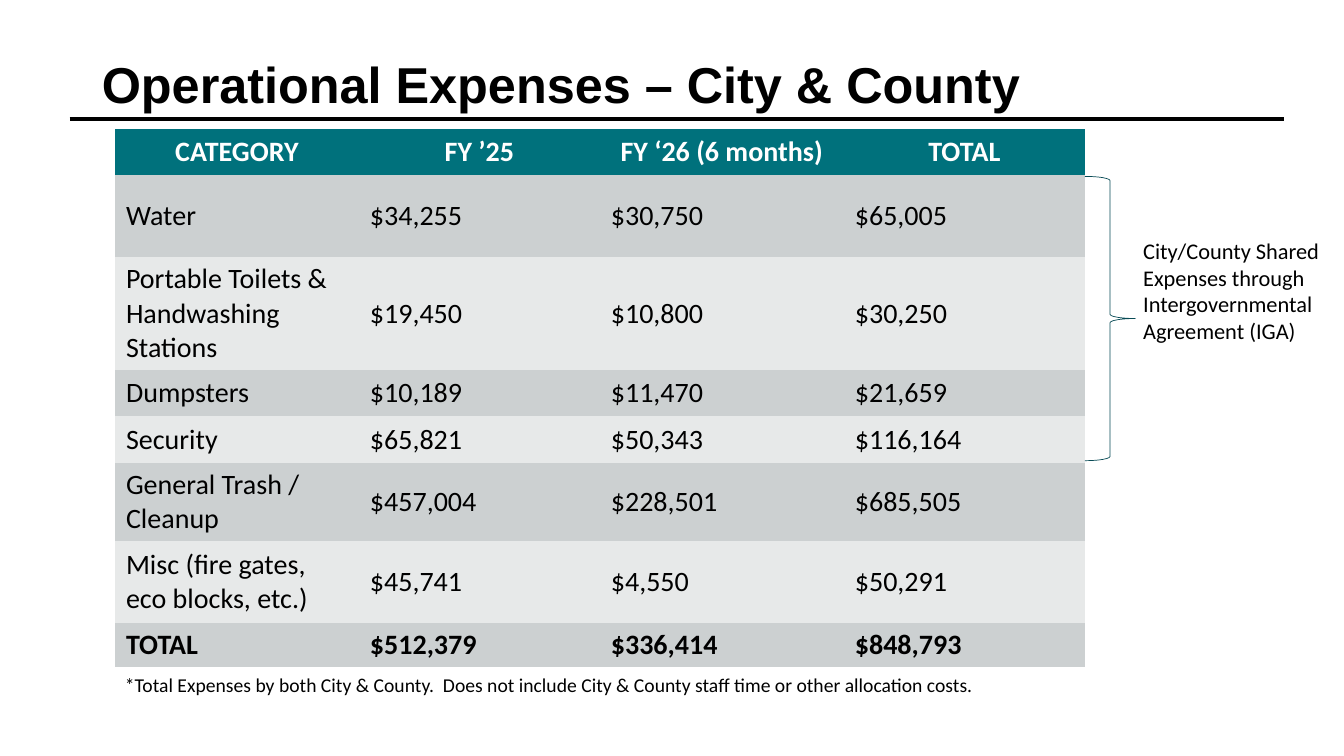
"""Build the slide of operational expenses for city and county."""
import dataclasses
import pptx
import pptx.dml.color
import pptx.enum.shapes
import pptx.enum.text
import pptx.oxml.ns
import pptx.util
import lxml.etree

PX = 9144
PLAIN = "{2D5ABB26-0587-4C30-8999-92F81FD0307C}"
ALIGN = pptx.enum.text.PP_ALIGN
ANCHOR = pptx.enum.text.MSO_ANCHOR
FIT = pptx.enum.text.MSO_AUTO_SIZE


@dataclasses.dataclass(frozen=True)
class Theme:
    """Hold the colours, fonts and type sizes."""
    ink: str = "000000"
    light: str = "FFFFFF"
    head: str = "00717C"
    bands: tuple = ("CCD0D1", "E7E9E9")
    brace: str = "084A55"
    title: str = "Arial"
    body: str = "Calibri"
    big: int = 36
    cell: int = 20
    side: int = 16
    foot: int = 14


LOOK = Theme()
COLS = (242, 239, 242, 239)
ROWS = (46, 81, 105, 46, 46, 46, 81, 42)
COSTS = (
    ("CATEGORY", "FY ’25", "FY ‘26 (6 months)", "TOTAL"),
    ("Water", "$34,255", "$30,750", "$65,005"),
    ("Portable Toilets & Handwashing Stations", "$19,450", "$10,800", "$30,250"),
    ("Dumpsters", "$10,189", "$11,470", "$21,659"),
    ("Security", "$65,821", "$50,343", "$116,164"),
    ("General Trash / Cleanup", "$457,004", "$228,501", "$685,505"),
    ("Misc (fire gates, eco blocks, etc.)", "$45,741", "$4,550", "$50,291"),
    ("TOTAL", "$512,379", "$336,414", "$848,793"),
)


def scale(*sizes):
    """Turn px lengths into EMU."""
    return [pptx.util.Emu(size * PX) for size in sizes]


def tint(code):
    """Turn a hex code into a colour."""
    return pptx.dml.color.RGBColor.from_string(code)


def write(frame, text, size, face=LOOK.body, color=LOOK.ink, bold=False, align=ALIGN.LEFT):
    """Add one run to the first paragraph of a frame."""
    para = frame.paragraphs[0]
    para.alignment = align
    run = para.add_run()
    run.text = text
    run.font.name = face
    run.font.size = pptx.util.Pt(size)
    run.font.bold = bold
    run.font.color.rgb = tint(color)
    return para


def header(slide, box):
    """Place the title in its box and the rule near its foot."""
    left, top, width, height = box
    title = slide.shapes.title
    title.left, title.top, title.width, title.height = scale(*box)
    frame = title.text_frame
    frame.auto_size = FIT.NONE
    frame.word_wrap = True
    frame.vertical_anchor = ANCHOR.BOTTOM
    para = write(frame, "Operational Expenses – City & County", LOOK.big, LOOK.title, bold=True)
    para.line_spacing = 0.9
    level = top + height - 1
    ends = scale(left - 22, level, left + width + 33, level)
    rule = slide.shapes.add_connector(pptx.enum.shapes.MSO_CONNECTOR.STRAIGHT, *ends)
    rule.line.color.rgb = tint(LOOK.ink)
    rule.line.width = pptx.util.Pt(3)
    props = rule.element.find(pptx.oxml.ns.qn("p:spPr"))
    lxml.etree.SubElement(props, pptx.oxml.ns.qn("a:effectLst"))


def grid(slide, box):
    """Place the table of costs in its box."""
    shape = slide.shapes.add_table(len(ROWS), len(COLS), *scale(*box))
    for style in shape.element.iter(pptx.oxml.ns.qn("a:tableStyleId")):
        style.text = PLAIN
    table = shape.table
    for col, width in zip(table.columns, scale(*COLS)):
        col.width = width
    for row, height in zip(table.rows, scale(*ROWS)):
        row.height = height
    last = len(COSTS) - 1
    for i, costs in enumerate(COSTS):
        top = i == 0
        for j, text in enumerate(costs):
            cell = table.cell(i, j)
            cell.fill.solid()
            cell.fill.fore_color.rgb = tint(LOOK.head if top else LOOK.bands[(i - 1) % 2])
            cell.vertical_anchor = ANCHOR.MIDDLE
            cell.margin_left, cell.margin_right = scale(11, 11)
            write(cell.text_frame, text, LOOK.cell,
                  color=LOOK.light if top else LOOK.ink,
                  bold=i in (0, last), align=ALIGN.CENTER if top else ALIGN.LEFT)


def note(slide, box, text, size):
    """Place a wrapped text box that grows with its text."""
    frame = slide.shapes.add_textbox(*scale(*box)).text_frame
    frame.word_wrap = True
    frame.auto_size = FIT.SHAPE_TO_FIT_TEXT
    write(frame, text, size)


def shared(slide, box):
    """Place the brace in its box and its label at the tip."""
    left, top, width, height = box
    kind = pptx.enum.shapes.MSO_SHAPE.RIGHT_BRACE
    brace = slide.shapes.add_shape(kind, *scale(*box))
    brace.shadow.inherit = False
    brace.fill.background()
    brace.line.color.rgb = tint(LOOK.brace)
    brace.line.width = pptx.util.Pt(0.5)
    note(slide, (left + width - 2, top + 55, 204, 118),
         "City/County Shared Expenses through Intergovernmental Agreement (IGA)", LOOK.side)


def main():
    """Build and save the deck."""
    deck = pptx.Presentation()
    deck.slide_width, deck.slide_height = scale(1333, 750)
    slide = deck.slides.add_slide(deck.slide_layouts[5])
    header(slide, (91, 54, 1150, 65))
    grid(slide, (114, 128, sum(COLS), sum(ROWS)))
    note(slide, (114, 663, 974, 34),
         "*Total Expenses by both City & County.  Does not include City & County "
         "staff time or other allocation costs.", LOOK.foot)
    shared(slide, (1076, 175, 50, 282))
    deck.save("out.pptx")


if __name__ == "__main__":
    main()
